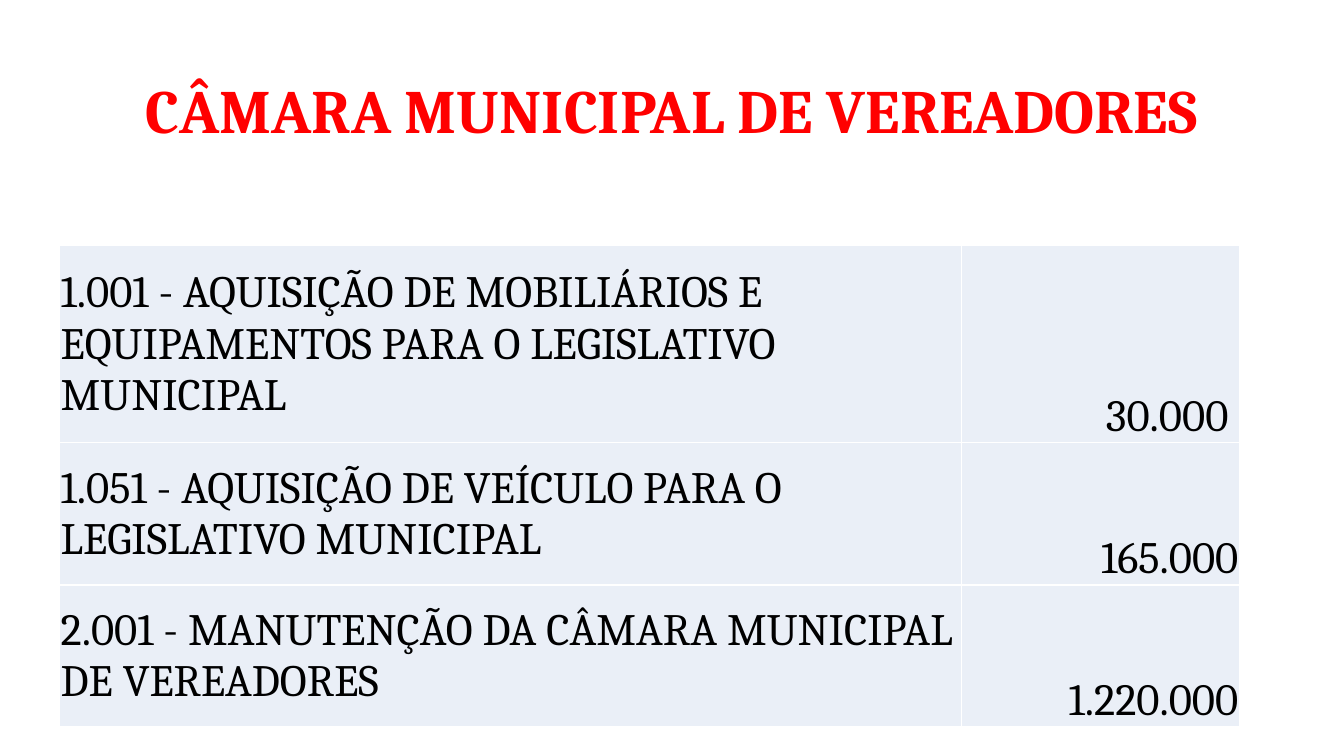
import lxml.etree
import pptx
import pptx.dml.color
import pptx.enum.text
import pptx.oxml.ns
import pptx.util

Cm = pptx.util.Cm
Pt = pptx.util.Pt
Align = pptx.enum.text.PP_ALIGN
Anchor = pptx.enum.text.MSO_ANCHOR

COLORS = {"title": "FF0000", "text": "000000", "cell": "EAEFF7", "border": "FFFFFF"}
FONT = "Cambria"
TITLE = "CÂMARA MUNICIPAL DE VEREADORES"
BUDGET = [
    ("1.001 - AQUISIÇÃO DE MOBILIÁRIOS E EQUIPAMENTOS PARA O LEGISLATIVO MUNICIPAL", " 30.000 "),
    ("1.051 - AQUISIÇÃO DE VEÍCULO PARA O LEGISLATIVO MUNICIPAL", "165.000"),
    ("2.001 - MANUTENÇÃO DA CÂMARA MUNICIPAL DE VEREADORES", "1.220.000"),
]
COLUMN_WIDTHS = [Cm(22.73), Cm(7.01)]
ROW_HEIGHTS = [Cm(4.98), Cm(3.58), Cm(3.58)]
COLUMN_FORMATS = [(Anchor.MIDDLE, Align.LEFT), (Anchor.BOTTOM, Align.RIGHT)]
CELL_MARGINS = {
    "margin_left": Cm(0.03),
    "margin_right": Cm(0.03),
    "margin_top": Cm(0.03),
    "margin_bottom": Cm(0),
}


def set_attributes(target, values):
    """Set each named attribute of the target."""
    for name, value in values.items():
        setattr(target, name, value)


def write_text(paragraph, text, color, paragraph_format, font_format):
    """Write one formatted run into a paragraph."""
    set_attributes(paragraph, paragraph_format)
    run = paragraph.add_run()
    run.text = text
    set_attributes(run.font, {"name": FONT, **font_format})
    run.font.color.rgb = pptx.dml.color.RGBColor.from_string(COLORS[color])


def add_title(slide):
    """Add the centred heading."""
    shape = slide.shapes.add_textbox(Cm(2.33), Cm(1.01), Cm(29.21), Cm(3.68))
    set_attributes(shape.text_frame, {"word_wrap": True, "vertical_anchor": Anchor.MIDDLE})
    write_text(
        shape.text_frame.paragraphs[0], TITLE, "title",
        {"alignment": Align.CENTER, "line_spacing": 0.9},
        {"size": Pt(44), "bold": True},
    )


def add_borders(cell):
    """Draw a thin line on all four sides of a cell."""
    qn = pptx.oxml.ns.qn
    properties = cell._tc.get_or_add_tcPr()
    for position, side in enumerate(("lnL", "lnR", "lnT", "lnB")):
        line = lxml.etree.Element(qn(f"a:{side}"), w=str(Pt(1)))
        fill = lxml.etree.SubElement(line, qn("a:solidFill"))
        lxml.etree.SubElement(fill, qn("a:srgbClr"), val=COLORS["border"])
        properties.insert(position, line)


def fill_cell(cell, text, anchor, alignment):
    """Format one table cell and write its text."""
    set_attributes(cell, {**CELL_MARGINS, "vertical_anchor": anchor})
    cell.fill.solid()
    cell.fill.fore_color.rgb = pptx.dml.color.RGBColor.from_string(COLORS["cell"])
    add_borders(cell)
    write_text(
        cell.text_frame.paragraphs[0], text, "text",
        {"alignment": alignment}, {"size": Pt(32), "bold": False},
    )


def add_budget_table(slide):
    """Add the table of budget items and amounts."""
    table = slide.shapes.add_table(
        len(BUDGET), len(COLUMN_WIDTHS), Cm(1.5), Cm(6.18),
        sum(COLUMN_WIDTHS), sum(ROW_HEIGHTS),
    ).table
    set_attributes(table, {"first_row": False, "horz_banding": False})
    for column, width in zip(table.columns, COLUMN_WIDTHS):
        column.width = width
    for row, height, texts in zip(table.rows, ROW_HEIGHTS, BUDGET):
        row.height = height
        for cell, text, (anchor, alignment) in zip(row.cells, texts, COLUMN_FORMATS):
            fill_cell(cell, text, anchor, alignment)


def main():
    """Build and save the slide."""
    presentation = pptx.Presentation()
    set_attributes(presentation, {"slide_width": Cm(33.87), "slide_height": Cm(19.05)})
    slide = presentation.slides.add_slide(presentation.slide_layouts[6])
    add_title(slide)
    add_budget_table(slide)
    presentation.save("out.pptx")


if __name__ == "__main__":
    main()
